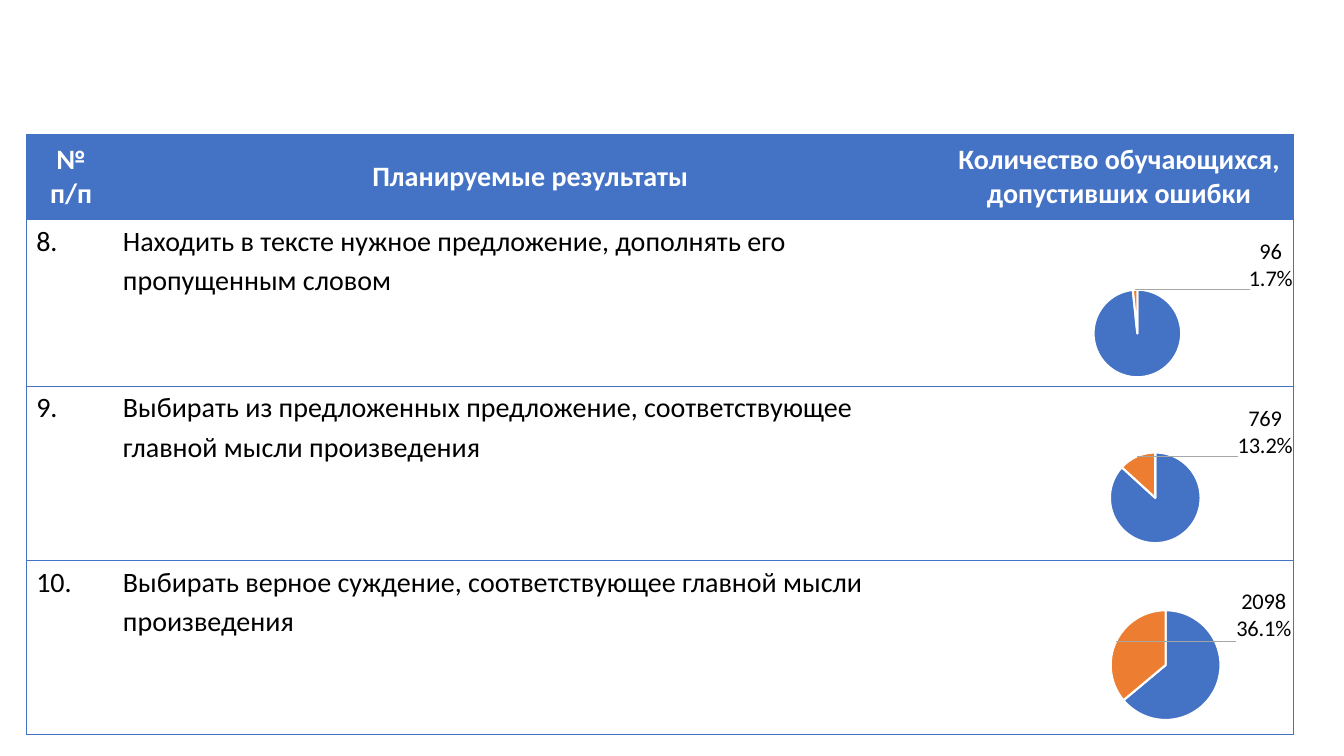
from dataclasses import dataclass

from lxml import etree
from pptx import Presentation, util as u
from pptx.chart.data import CategoryChartData
from pptx.dml.color import RGBColor
from pptx.enum import chart as charts, text
from pptx.oxml import parse_xml
from pptx.oxml.ns import nsdecls, qn


@dataclass
class Theme:
    font: str = "Calibri"
    blue: str = "4472C4"
    orange: str = "ED7D31"
    white: str = "FFFFFF"
    black: str = "000000"
    leader: str = "A6A6A6"
    table_size: int = 20
    label_size: int = 16
    chart_size: int = 12


theme = Theme()


def write(cell, words, color=theme.black, bold=False, align=text.PP_ALIGN.LEFT,
          anchor=text.MSO_ANCHOR.TOP, spacing=None):
    cell.vertical_anchor = anchor
    paragraph = cell.text_frame.paragraphs[0]
    paragraph.alignment = align
    if spacing:
        paragraph.line_spacing = spacing
    run = paragraph.add_run()
    run.text = words
    run.font.name = theme.font
    run.font.size = u.Pt(theme.table_size)
    run.font.bold = bold
    run.font.color.rgb = RGBColor.from_string(color)


def add_border(cell, side, visible):
    line = etree.SubElement(cell._tc.get_or_add_tcPr(), qn("a:ln" + side), w=str(u.Pt(0.5)))
    if visible:
        fill = etree.SubElement(line, qn("a:solidFill"))
        etree.SubElement(fill, qn("a:srgbClr"), val=theme.blue)
    else:
        etree.SubElement(line, qn("a:noFill"))


presentation = Presentation()
presentation.slide_width = u.Inches(13.33)
presentation.slide_height = u.Inches(7.5)
slide = presentation.slides.add_slide(presentation.slide_layouts[6])

# Content: number, result, pupils without and with errors,
# pie centre and diameter in inches, label offset as shares of the chart
headings = ["№ п/п", "Планируемые результаты", "Количество обучающихся, допустивших ошибки"]
results = [
    ("8.", "Находить в тексте нужное предложение, дополнять его пропущенным словом",
     (5721, 96), (11.28, 3.31, 0.87), (0.44, 0.05)),
    ("9.", "Выбирать из предложенных предложение, соответствующее главной мысли произведения",
     (5048, 769), (11.46, 4.94, 0.9), (0.51, 0.05)),
    ("10.", "Выбирать верное суждение, соответствующее главной мысли произведения",
     (3719, 2098), (11.56, 6.6, 1.09), (0.58, 0.02)),
]

# Table grid
column_widths = [0.89, 8.22, 3.46]
row_heights = [0.85, 1.65, 1.73, 1.73]
table = slide.shapes.add_table(
    len(row_heights), len(column_widths), u.Inches(0.26), u.Inches(1.33),
    u.Inches(sum(column_widths)), u.Inches(sum(row_heights))).table
table.horz_banding = False
for column, width in zip(table.columns, column_widths):
    column.width = u.Inches(width)
for row, height in zip(table.rows, row_heights):
    row.height = u.Inches(height)

# Outer frame, row lines and fills
for row_index, row in enumerate(table.rows):
    for column_index, cell in enumerate(row.cells):
        add_border(cell, "L", column_index == 0)
        add_border(cell, "R", column_index == len(column_widths) - 1)
        add_border(cell, "T", True)
        add_border(cell, "B", True)
        if row_index == 0:
            cell.fill.solid()
            cell.fill.fore_color.rgb = RGBColor.from_string(theme.blue)
        else:
            cell.fill.background()

# Table text
for column_index, heading in enumerate(headings):
    write(table.cell(0, column_index), heading, color=theme.white, bold=True,
          align=text.PP_ALIGN.CENTER, anchor=text.MSO_ANCHOR.MIDDLE)
for row_index, (number, result, *_) in enumerate(results, start=1):
    write(table.cell(row_index, 0), number)
    result_cell = table.cell(row_index, 1)
    result_cell.margin_left = result_cell.margin_right = u.Inches(0.07)
    result_cell.margin_top = result_cell.margin_bottom = 0
    write(result_cell, result, spacing=1.15)

# Pie charts, from the bottom row up
chart_left, chart_width, chart_height = 9.73, 3.09, 1.76
chart_tops = [2.13, 3.77, 5.53]
for chart_top, (_, _, counts, pie, offset) in reversed(list(zip(chart_tops, results))):
    data = CategoryChartData()
    data.categories = ["1", "2"]
    data.add_series("Series 1", counts)
    chart = slide.shapes.add_chart(
        charts.XL_CHART_TYPE.PIE, u.Inches(chart_left), u.Inches(chart_top),
        u.Inches(chart_width), u.Inches(chart_height), data).chart
    chart.has_legend = False
    chart.has_title = False
    chart.font.name = theme.font
    chart.font.size = u.Pt(theme.chart_size)
    chart.font.color.rgb = RGBColor.from_string(theme.black)
    plot = chart.plots[0]
    plot.vary_by_categories = True
    series = plot.series[0]
    for index, color in enumerate((theme.blue, theme.orange)):
        slice_format = series.points[index].format
        slice_format.fill.solid()
        slice_format.fill.fore_color.rgb = RGBColor.from_string(color)
        slice_format.line.color.rgb = RGBColor.from_string(theme.white)
        slice_format.line.width = u.Pt(1.5)

    # Pie position inside the chart
    center_x, center_y, diameter = pie
    shares = {"x": (center_x - diameter / 2 - chart_left) / chart_width,
              "y": (center_y - diameter / 2 - chart_top) / chart_height,
              "w": diameter / chart_width, "h": diameter / chart_height}
    sizes = "".join(f'<c:{key} val="{share:.3f}"/>' for key, share in shares.items())
    plot_area = chart._chartSpace.chart.plotArea
    for layout in plot_area.findall(qn("c:layout")):
        plot_area.remove(layout)
    plot_area.insert(0, parse_xml(
        f'<c:layout {nsdecls("c")}><c:manualLayout><c:layoutTarget val="inner"/>'
        f'<c:xMode val="edge"/><c:yMode val="edge"/>{sizes}</c:manualLayout></c:layout>'))

    # Moved label with a leader line on the slice of errors
    label_font = (
        f'<c:txPr><a:bodyPr/><a:p><a:pPr><a:defRPr sz="{theme.label_size * 100}">'
        f'<a:solidFill><a:srgbClr val="{theme.black}"/></a:solidFill>'
        f'<a:latin typeface="{theme.font}"/></a:defRPr></a:pPr>'
        '<a:endParaRPr lang="ru-RU"/></a:p></c:txPr>')
    label_look = (
        '<c:numFmt formatCode="0.0%" sourceLinked="0"/><c:spPr><a:noFill/></c:spPr>'
        f'{label_font}<c:dLblPos val="outEnd"/><c:showLegendKey val="0"/><c:showVal val="1"/>'
        '<c:showCatName val="0"/><c:showSerName val="0"/><c:showPercent val="1"/>'
        '<c:showBubbleSize val="0"/><c:separator>\n</c:separator>')
    labels = parse_xml(
        f'<c:dLbls {nsdecls("c", "a")}>'
        '<c:dLbl><c:idx val="0"/><c:delete val="1"/></c:dLbl>'
        '<c:dLbl><c:idx val="1"/><c:layout><c:manualLayout>'
        f'<c:x val="{offset[0]}"/><c:y val="{offset[1]}"/></c:manualLayout></c:layout>'
        f'{label_look}</c:dLbl>{label_look}<c:showLeaderLines val="1"/>'
        '<c:leaderLines><c:spPr><a:ln w="9525"><a:solidFill>'
        f'<a:srgbClr val="{theme.leader}"/></a:solidFill></a:ln></c:spPr></c:leaderLines>'
        '</c:dLbls>')
    series._element.find(qn("c:cat")).addprevious(labels)
    for plot_labels in plot._element.findall(qn("c:dLbls")):
        plot._element.remove(plot_labels)

presentation.save("out.pptx")
